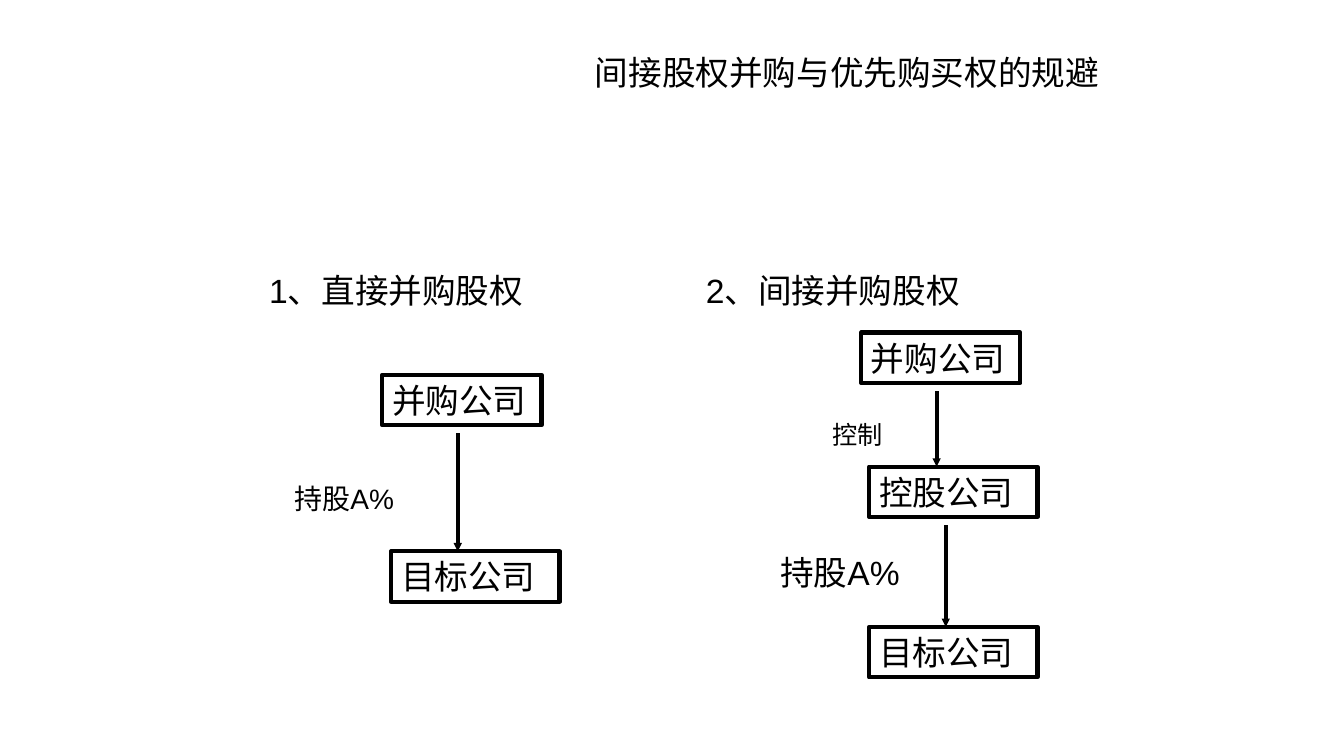
import pptx
import pptx.dml.color
import pptx.enum.shapes
import pptx.enum.text
import pptx.oxml
import pptx.oxml.ns
import pptx.util

INK = "000000"
ALIGN = pptx.enum.text.PP_ALIGN
ANCHOR = pptx.enum.text.MSO_ANCHOR
INCH = pptx.util.Inches


def color(code):
    return pptx.dml.color.RGBColor.from_string(code)


def put(item, spec):
    """Set each attribute of item from a dict of values."""
    for name, value in spec.items():
        setattr(item, name, value)


def place(shape, box):
    put(shape, dict(zip(("left", "top", "width", "height"), map(INCH, box))))


def write(shape, text, size=24, face="Arial", align=ALIGN.LEFT, anchor=ANCHOR.MIDDLE):
    frame = shape.text_frame
    put(frame, {"text": text, "word_wrap": True, "vertical_anchor": anchor,
                "auto_size": pptx.enum.text.MSO_AUTO_SIZE.NONE})
    line = frame.paragraphs[0]
    put(line, {"alignment": align, "space_before": pptx.util.Pt(0)})
    put(line.font, {"name": face, "size": pptx.util.Pt(size), "bold": False})
    line.font.color.rgb = color(INK)


def add_xml(parent, text):
    parent.append(pptx.oxml.parse_xml(
        text.replace("/>", " " + pptx.oxml.ns.nsdecls("a") + "/>")))


def stroke(shape):
    shape.line.color.rgb = color(INK)
    shape.line.width = pptx.util.Pt(3)


# Title at the top right
def head(slide, box):
    place(slide.shapes.title, box)
    write(slide.shapes.title, "间接股权并购与优先购买权的规避",
          align=ALIGN.RIGHT, anchor=ANCHOR.BOTTOM)


# Company frame
def firm(slide, box, name):
    rect = slide.shapes.add_shape(pptx.enum.shapes.MSO_SHAPE.RECTANGLE, *map(INCH, box))
    rect.shadow.inherit = False
    rect.fill.background()
    stroke(rect)
    write(rect, name, face="Times New Roman")


# Arrow pointing down to the next company
def arrow(slide, x, start, end):
    line = slide.shapes.add_connector(
        pptx.enum.shapes.MSO_CONNECTOR.STRAIGHT, *map(INCH, (x, start, x, end)))
    stroke(line)
    add_xml(line.line._get_or_add_ln(), '<a:tailEnd type="triangle" w="sm" len="sm"/>')
    add_xml(line._element.spPr, "<a:effectLst/>")


# Column: heading, chain of companies, and a label beside each arrow
def chain(slide, holder, box, title, firms, links):
    left, top = box[:2]
    place(holder, box)
    write(holder, title, anchor=ANCHOR.TOP)
    props = holder.text_frame.paragraphs[0]._p.get_or_add_pPr()
    put(props, {"marL": 0, "indent": 0})
    add_xml(props, "<a:buNone/>")
    for name, x, y, width in firms:
        firm(slide, (left + x, top + y, width, 0.5), name)
    for (text, size, x, y, stem), above, below in zip(links, firms, firms[1:]):
        arrow(slide, left + stem, top + above[2] + 0.58, top + below[2])
        label = slide.shapes.add_textbox(*map(INCH, (left + x, top + y, 1.6, 0.5)))
        write(label, text, size)


def main():
    deck = pptx.Presentation()
    put(deck, {"slide_width": INCH(13.33), "slide_height": INCH(7.5)})
    slide = deck.slides.add_slide(deck.slide_layouts[3])
    head(slide, (2.89, 0.13, 8.11, 0.84))
    direct, via = list(slide.placeholders)[1:3]
    chain(slide, direct, (2.57, 2.63, 4.41, 4.19), "1、直接并购股权",
          [("并购公司", 1.22, 1.09, 1.58), ("目标公司", 1.31, 2.84, 1.67)],
          [("持股A%", 20, 0.25, 2.06, 1.97)])
    chain(slide, via, (6.9, 2.63, 4.41, 4.87), "2、间接并购股权",
          [("并购公司", 1.64, 0.67, 1.58), ("控股公司", 1.72, 2.0, 1.67),
           ("目标公司", 1.72, 3.59, 1.67)],
          [("控制", 18, 1.26, 1.43, 2.39), ("持股A%", 24, 0.74, 2.8, 2.48)])
    deck.save("out.pptx")


if __name__ == "__main__":
    main()
